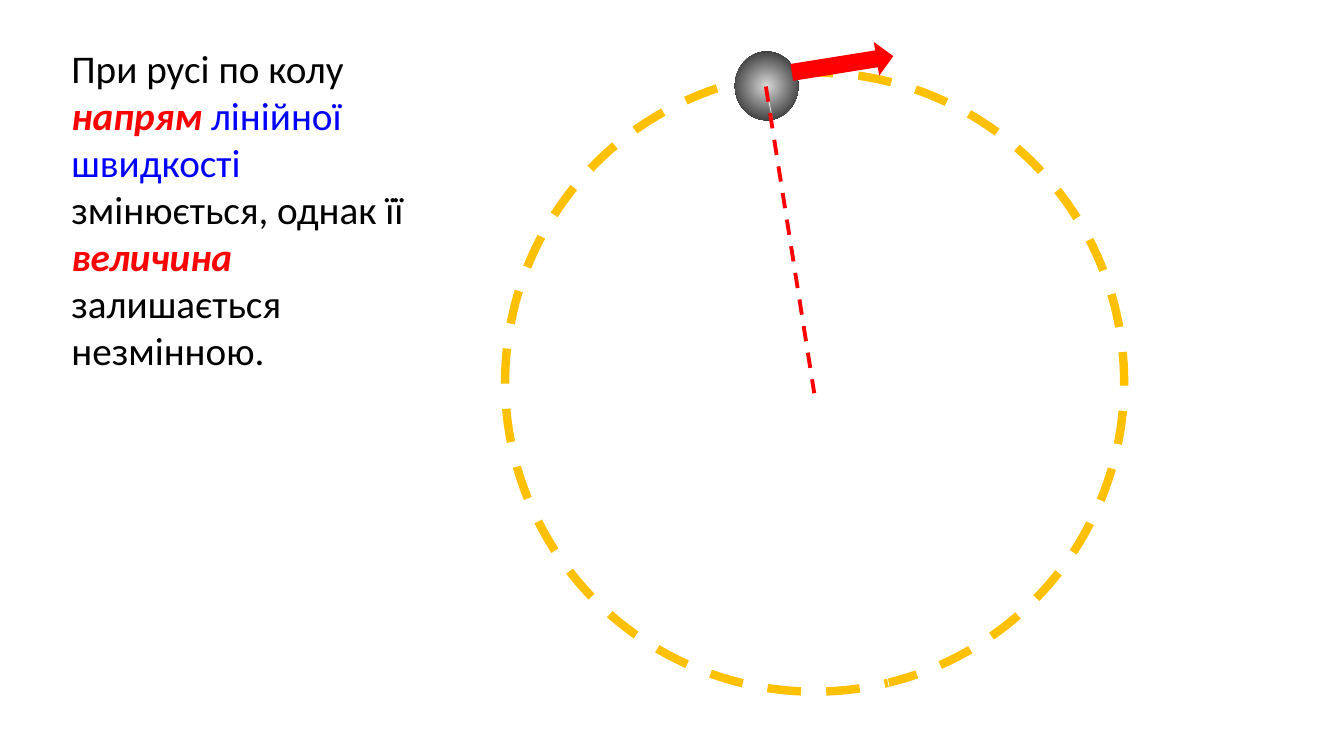
from lxml.etree import SubElement
from pptx import Presentation
from pptx.dml.color import RGBColor
from pptx.enum.dml import MSO_LINE
from pptx.enum.shapes import MSO_CONNECTOR, MSO_SHAPE
from pptx.enum.text import MSO_AUTO_SIZE
from pptx.oxml.ns import qn
from pptx.util import Cm, Pt

COLORS = {
    "black": "000000",
    "red": "FF0000",
    "blue": "0000FF",
    "orbit": "FFC000",
    "white": "FFFFFF",
    "ball_center": "D9D9D9",
    "ball_edge": "0D0D0D",
}

STATEMENT = [
    ("При русі по колу ", "black", False),
    ("напрям ", "red", True),
    ("лінійної швидкості ", "blue", False),
    ("змінюється, однак її ", "black", False),
    ("величина", "red", True),
    (" залишається незмінною.", "black", False),
]


def rgb(name):
    """Return the named colour."""
    return RGBColor.from_string(COLORS[name])


def add_figure(shapes, preset, left, top, width, height):
    """Add a preset shape without shadow or outline."""
    figure = shapes.add_shape(preset, Cm(left), Cm(top), Cm(width), Cm(height))
    figure.shadow.inherit = False
    figure.line.fill.background()
    return figure


def style_line(line, color, weight, dash=None):
    """Set the colour, weight and dash of a line."""
    line.color.rgb = rgb(color)
    line.width = Pt(weight)
    if dash:
        line.dash_style = dash


def add_orbit(shapes):
    """Add the dashed circular path."""
    orbit = add_figure(shapes, MSO_SHAPE.OVAL, 12.73, 1.83, 15.6, 15.6)
    orbit.fill.background()
    style_line(orbit.line, "orbit", 6, MSO_LINE.DASH)


def add_ball(shapes):
    """Add the moving ball with a radial gradient."""
    ball = add_figure(shapes, MSO_SHAPE.OVAL, 18.52, 1.3, 1.6, 1.73)
    ball.fill.gradient()
    for stop, name, position in zip(
        ball.fill.gradient_stops, ("ball_center", "ball_edge"), (0, 1)
    ):
        stop.color.rgb = rgb(name)
        stop.position = position
    gradient = ball.element.spPr.find(qn("a:gradFill"))
    gradient.remove(gradient.find(qn("a:lin")))
    radial = SubElement(gradient, qn("a:path"), path="circle")
    SubElement(radial, qn("a:fillToRect"), dict.fromkeys("ltrb", "50000"))


def add_velocity(shapes):
    """Add the arrow of linear velocity."""
    velocity = add_figure(shapes, MSO_SHAPE.RIGHT_ARROW, 19.94, 1.19, 2.59, 0.86)
    velocity.rotation = 350.9
    velocity.fill.solid()
    velocity.fill.fore_color.rgb = rgb("red")


def add_ray(shapes, end_x, end_y, color, weight, dash=None):
    """Add a straight line that starts at the ball's centre."""
    ray = shapes.add_connector(
        MSO_CONNECTOR.STRAIGHT, Cm(19.3), Cm(2.18), Cm(end_x), Cm(end_y)
    )
    style_line(ray.line, color, weight, dash)
    SubElement(ray.element.spPr, qn("a:effectLst"))


def add_statement(shapes):
    """Add the statement about linear velocity."""
    statement = shapes.add_textbox(Cm(1.55), Cm(0.99), Cm(9.78), Cm(8.64))
    frame = statement.text_frame
    frame.word_wrap = True
    frame.auto_size = MSO_AUTO_SIZE.SHAPE_TO_FIT_TEXT
    for words, color, emphasized in STATEMENT:
        run = frame.paragraphs[0].add_run()
        run.text = words
        run.font.name = "Calibri"
        run.font.size = Pt(28)
        run.font.bold = run.font.italic = emphasized
        run.font.color.rgb = rgb(color)


def main():
    """Build the slide about motion along a circle."""
    presentation = Presentation()
    presentation.slide_width = Cm(33.87)
    presentation.slide_height = Cm(19.05)
    slide = presentation.slides.add_slide(presentation.slide_layouts[6])
    add_orbit(slide.shapes)
    rotor = slide.shapes.add_group_shape().shapes
    add_ball(rotor)
    add_ray(rotor, 22.61, 18.29, "white", 0.5)
    add_velocity(rotor)
    add_ray(rotor, 20.52, 9.91, "red", 2.75, MSO_LINE.DASH)
    add_statement(slide.shapes)
    presentation.save("out.pptx")


if __name__ == "__main__":
    main()
